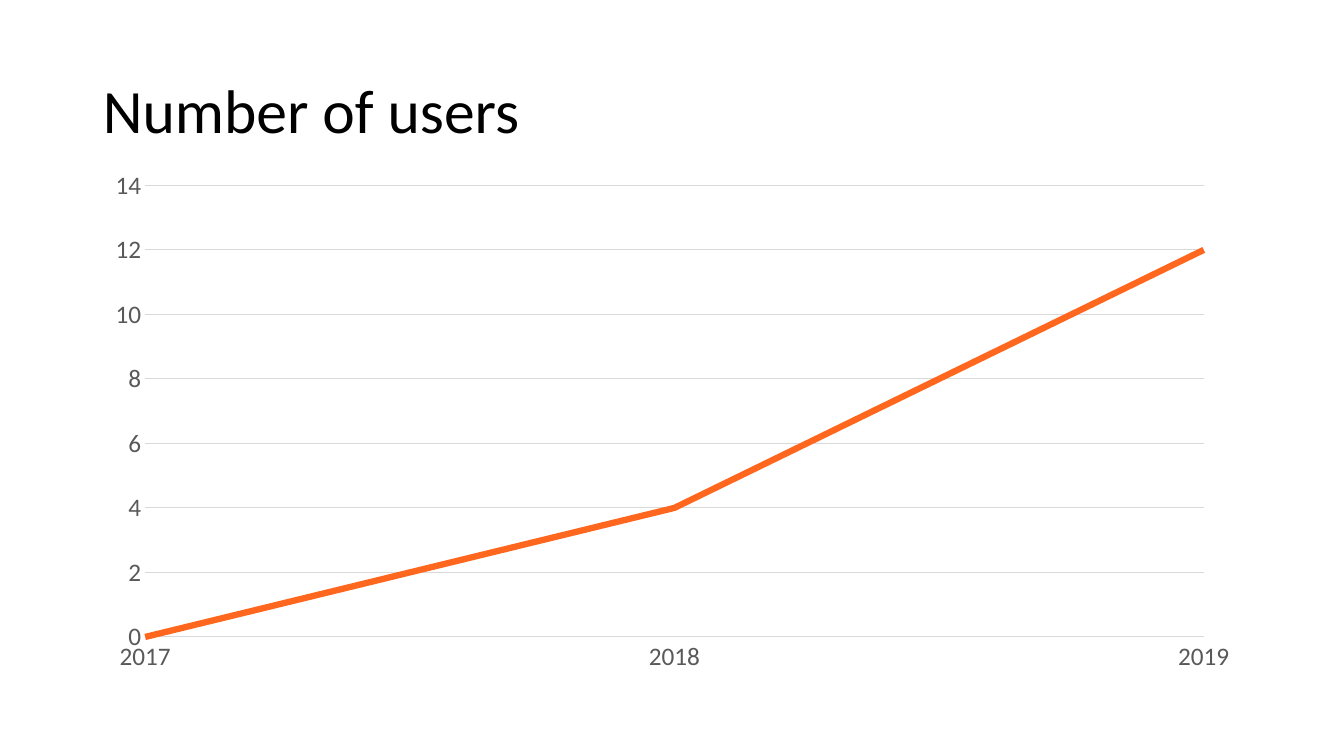
"""Build a slide with a line chart of the number of users per year."""
from lxml import etree
from pptx import Presentation
from pptx.chart.data import CategoryChartData
from pptx.dml.color import RGBColor
from pptx.enum.chart import XL_CHART_TYPE, XL_MARKER_STYLE, XL_TICK_MARK
from pptx.enum.text import MSO_ANCHOR, PP_ALIGN
from pptx.oxml.ns import qn
from pptx.util import Inches, Pt

LINE = XL_CHART_TYPE.LINE
NO_MARKER = XL_MARKER_STYLE.NONE
NO_TICK = XL_TICK_MARK.NONE
MIDDLE = MSO_ANCHOR.MIDDLE
LEFT = PP_ALIGN.LEFT

TITLE = "Number of users"
YEARS = ["2017", "2018", "2019"]
USERS = [0, 4, 12]
COLORS = {"title": "000000", "label": "595959", "grid": "D9D9D9", "users": "FF671F"}
FONT = "Calibri"
TITLE_BOX = (0.92, 0.4, 11.5, 1.45)
CHART_BOX = (0.91, 1.58, 11.5, 5.19)
PLOT_BOX = (1.44, 1.84, 10.5, 4.48)
SCALE = {"minimum_scale": 0, "maximum_scale": 14, "major_unit": 2}


def color(name):
    return RGBColor.from_string(COLORS[name])


def set_font(font, size, name):
    for key, value in {"name": FONT, "size": Pt(size), "bold": False}.items():
        setattr(font, key, value)
    font.color.rgb = color(name)


def set_line(line, width, name):
    line.width = Pt(width)
    line.color.rgb = color(name)


def add_title(s):
    title = s.shapes.title
    title.left, title.top, title.width, title.height = map(Inches, TITLE_BOX)
    tf = title.text_frame
    tf.vertical_anchor = MIDDLE
    p = tf.paragraphs[0]
    p.alignment, p.line_spacing = LEFT, 0.9
    r = p.add_run()
    r.text = TITLE
    set_font(r.font, 44, "title")


def place_plot(chart):
    plot_area = chart._chartSpace.chart.plotArea
    for old in plot_area.findall(qn("c:layout")):
        plot_area.remove(old)
    layout = etree.Element(qn("c:layout"))
    manual = etree.SubElement(layout, qn("c:manualLayout"))
    left, top, width, height = CHART_BOX
    x, y, w, h = PLOT_BOX
    values = {
        "layoutTarget": "inner", "xMode": "edge", "yMode": "edge",
        "x": (x - left) / width, "y": (y - top) / height,
        "w": w / width, "h": h / height,
    }
    for tag, value in values.items():
        etree.SubElement(manual, qn(f"c:{tag}")).set("val", str(value))
    plot_area.insert(0, layout)


def add_users_chart(s):
    data = CategoryChartData()
    data.categories = YEARS
    data.add_series("Series 1", USERS)
    chart = s.shapes.add_chart(LINE, *map(Inches, CHART_BOX), data).chart
    chart.has_title = chart.has_legend = False
    set_font(chart.font, 18, "label")
    years, counts = chart.category_axis, chart.value_axis
    for axis in (years, counts):
        axis.major_tick_mark = axis.minor_tick_mark = NO_TICK
        set_font(axis.tick_labels.font, 18, "label")
    set_line(years.format.line, 0.75, "grid")
    for key, value in SCALE.items():
        setattr(counts, key, value)
    counts.tick_labels.number_format = "General"
    counts.tick_labels.number_format_is_linked = False
    counts.format.line.fill.background()
    set_line(counts.major_gridlines.format.line, 0.75, "grid")
    cross = counts._element.find(qn("c:crossBetween"))
    if cross is None:
        cross = etree.Element(qn("c:crossBetween"))
        counts._element.find(qn("c:crosses")).addnext(cross)
    cross.set("val", "midCat")
    chart.plots[0].vary_by_categories = False
    users = chart.series[0]
    users.smooth = False
    users.marker.style = NO_MARKER
    set_line(users.format.line, 4.5, "users")
    place_plot(chart)


def main():
    prs = Presentation()
    prs.slide_width, prs.slide_height = Inches(13.33), Inches(7.5)
    s = prs.slides.add_slide(prs.slide_layouts[5])
    add_title(s)
    add_users_chart(s)
    prs.save("out.pptx")


if __name__ == "__main__":
    main()
